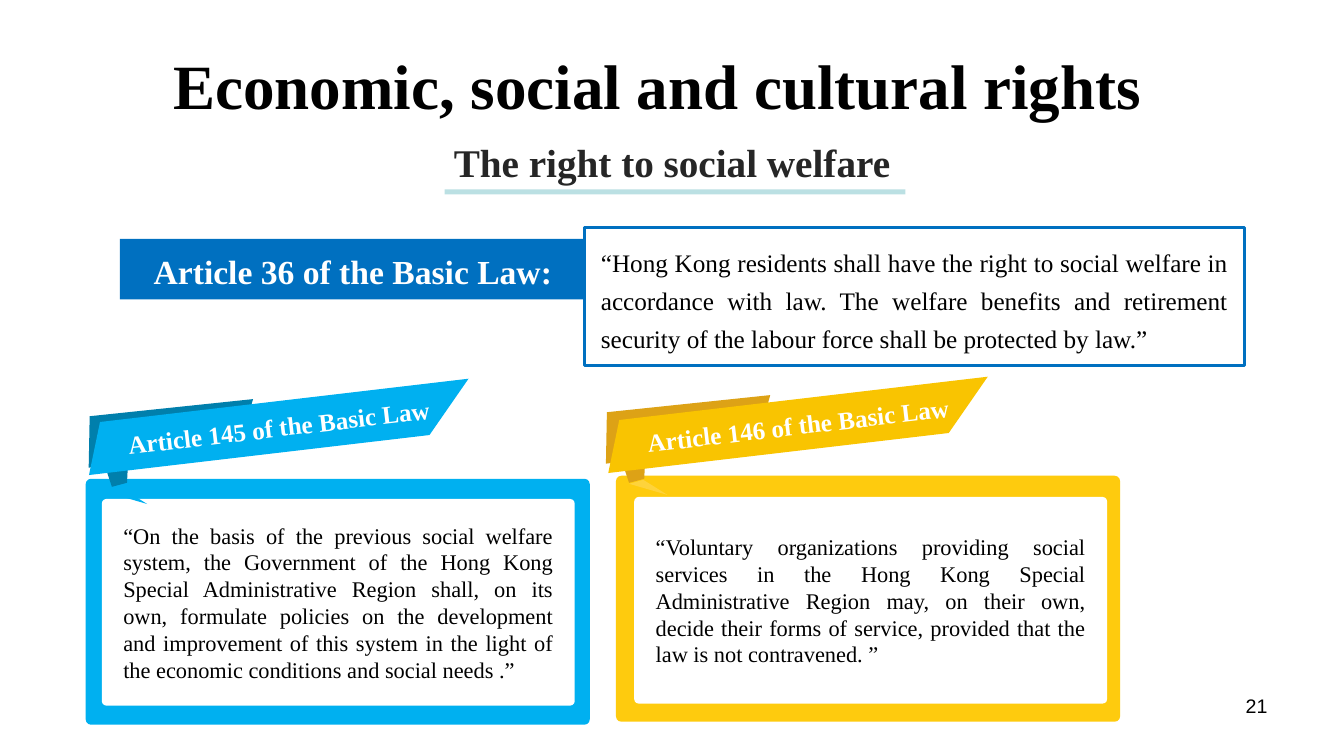
from pptx import Presentation
from pptx.dml.color import RGBColor
from pptx.enum import shapes, text
from pptx.util import Inches, Pt

SERIF = "Times New Roman"
BLACK = RGBColor(0x00, 0x00, 0x00)
WHITE = RGBColor(0xFF, 0xFF, 0xFF)
CHARCOAL = RGBColor(0x26, 0x26, 0x26)
PALE_TEAL = RGBColor(0xBB, 0xE0, 0xE3)
BLUE = RGBColor(0x00, 0x70, 0xC0)
SKY = RGBColor(0x00, 0xB0, 0xF0)
DEEP_SKY = RGBColor(0x00, 0x7F, 0xAC)
YELLOW = RGBColor(0xFE, 0xCB, 0x0E)
AMBER = RGBColor(0xF9, 0xC4, 0x01)
DARK_AMBER = RGBColor(0xDD, 0xA2, 0x16)
LIGHT_YELLOW = RGBColor(0xFE, 0xD3, 0x3B)

LEFT, CENTER = text.PP_ALIGN.LEFT, text.PP_ALIGN.CENTER
RIGHT, JUSTIFY = text.PP_ALIGN.RIGHT, text.PP_ALIGN.JUSTIFY
TOP, MIDDLE = text.MSO_ANCHOR.TOP, text.MSO_ANCHOR.MIDDLE
RECTANGLE = shapes.MSO_SHAPE.RECTANGLE
ROUNDED = shapes.MSO_SHAPE.ROUNDED_RECTANGLE

# Outlines in inches, measured from the top left corner of each piece
FOLD = [(1.63, 0), (1.49, 0.5), (0.39, 0.64), (0.38, 0.83),
        (0.23, 0.87), (0.16, 0.66), (0, 0.68), (0.01, 0.17)]
RIBBON = [(3.85, 0), (3.4, 0.51), (0, 0.51), (0.17, 0)]
TAIL = [(0.14, 0), (0.38, 0.15), (0, 0.04)]
RIBBON_TILT = -6.7


def write(shape, words, size, color, align=CENTER, bold=False, font=SERIF,
          margins=(0.1, 0.05), anchor=TOP):
    """Fill a shape with one paragraph; margins are (horizontal, vertical)."""
    frame = shape.text_frame
    frame.word_wrap = True
    frame.vertical_anchor = anchor
    frame.margin_left = frame.margin_right = Inches(margins[0])
    frame.margin_top = frame.margin_bottom = Inches(margins[1])
    paragraph = frame.paragraphs[0]
    paragraph.text = words
    paragraph.alignment = align
    paragraph.font.name = font
    paragraph.font.size = Pt(size)
    paragraph.font.bold = bold
    paragraph.font.color.rgb = color
    return paragraph


def paint(shape, fill):
    shape.shadow.inherit = False
    shape.line.fill.background()
    if fill is None:
        shape.fill.background()
    else:
        shape.fill.solid()
        shape.fill.fore_color.rgb = fill
    return shape


def add_label(slide, box, *args, **style):
    label = slide.shapes.add_textbox(*map(Inches, box))
    return write(label, *args, **style)


def add_block(slide, box, fill, preset=RECTANGLE):
    block = slide.shapes.add_shape(preset, *map(Inches, box))
    if preset == ROUNDED:
        block.adjustments[0] = 0.022
    return paint(block, fill)


def add_outline(slide, corner, points, fill):
    start, *rest = [(Inches(corner[0] + x), Inches(corner[1] + y))
                    for x, y in points]
    builder = slide.shapes.build_freeform(*start)
    builder.add_line_segments(rest, close=True)
    return paint(builder.convert_to_shape(), fill)


def add_article_card(slide, heading, quote, corners, colors):
    """Framed quote under a folded ribbon; both dicts are keyed by part."""
    add_block(slide, (*corners["frame"], 5, 2.44), colors["frame"], ROUNDED)
    panel = add_block(slide, (*corners["panel"], 4.69, 2.05), WHITE, ROUNDED)
    paragraph = write(panel, quote, 16, BLACK, JUSTIFY,
                      margins=(0.2, 0.1), anchor=MIDDLE)
    paragraph.space_after = Pt(6)
    add_outline(slide, corners["fold"], FOLD, colors["fold"])
    ribbon = add_outline(slide, corners["ribbon"], RIBBON, colors["ribbon"])
    ribbon.rotation = RIBBON_TILT
    write(ribbon, heading, 18, WHITE, bold=True, margins=(0, 0), anchor=MIDDLE)
    add_outline(slide, corners["tail"], TAIL, colors["tail"])


def add_headings(slide):
    add_label(slide, (1.67, 0.44, 10, 0.79),
              "Economic, social and cultural rights", 45, BLACK, LEFT,
              bold=True, margins=(0.05, 0.02), anchor=text.MSO_ANCHOR.BOTTOM)
    add_label(slide, (3.91, 1.35, 5.51, 0.63), "The right to social welfare",
              28, CHARCOAL, bold=True, margins=(0.05, 0.02))
    add_block(slide, (4.41, 1.88, 4.57, 0.05), PALE_TEAL)


def add_article_36(slide):
    quote = add_block(slide, (5.8, 2.26, 6.54, 1.37), None)
    quote.line.color.rgb = BLUE
    quote.line.width = Pt(2)
    paragraph = write(
        quote,
        "“Hong Kong residents shall have the right to social welfare in "
        "accordance with law. The welfare benefits and retirement security "
        "of the labour force shall be protected by law.”",
        18, BLACK, JUSTIFY, margins=(0.16, 0.12))
    paragraph.line_spacing = 1.25
    heading = add_block(slide, (1.19, 2.37, 4.62, 0.6), BLUE)
    write(heading, "Article 36 of the Basic Law:", 24, WHITE, bold=True,
          margins=(0.1, 0.12))


def main():
    deck = Presentation()
    deck.slide_width, deck.slide_height = Inches(13.33), Inches(7.5)
    slide = deck.slides.add_slide(deck.slide_layouts[6])

    add_headings(slide)
    add_article_36(slide)
    add_article_card(
        slide, "Article 145 of the Basic Law",
        "“On the basis of the previous social welfare system, the Government "
        "of the Hong Kong Special Administrative Region shall, on its own, "
        "formulate policies on the development and improvement of this system "
        "in the light of the economic conditions and social needs .”",
        {"frame": (0.85, 4.75), "panel": (1.01, 4.95), "fold": (0.88, 3.96),
         "ribbon": (0.84, 3.98), "tail": (1.08, 4.85)},
        {"frame": SKY, "fold": DEEP_SKY, "ribbon": SKY, "tail": SKY})
    add_article_card(
        slide, "Article 146 of the Basic Law",
        "“Voluntary organizations providing social services in the Hong Kong "
        "Special Administrative Region may, on their own, decide their forms "
        "of service, provided that the law is not contravened. ”",
        {"frame": (6.11, 4.72), "panel": (6.29, 4.93), "fold": (6.01, 3.92),
         "ribbon": (5.99, 3.96), "tail": (6.24, 4.76)},
        {"frame": YELLOW, "fold": DARK_AMBER, "ribbon": AMBER,
         "tail": LIGHT_YELLOW})
    add_label(slide, (9.56, 6.83, 3.11, 0.52), "21", 14, BLACK, RIGHT,
              font="Arial")

    deck.save("out.pptx")


if __name__ == "__main__":
    main()
